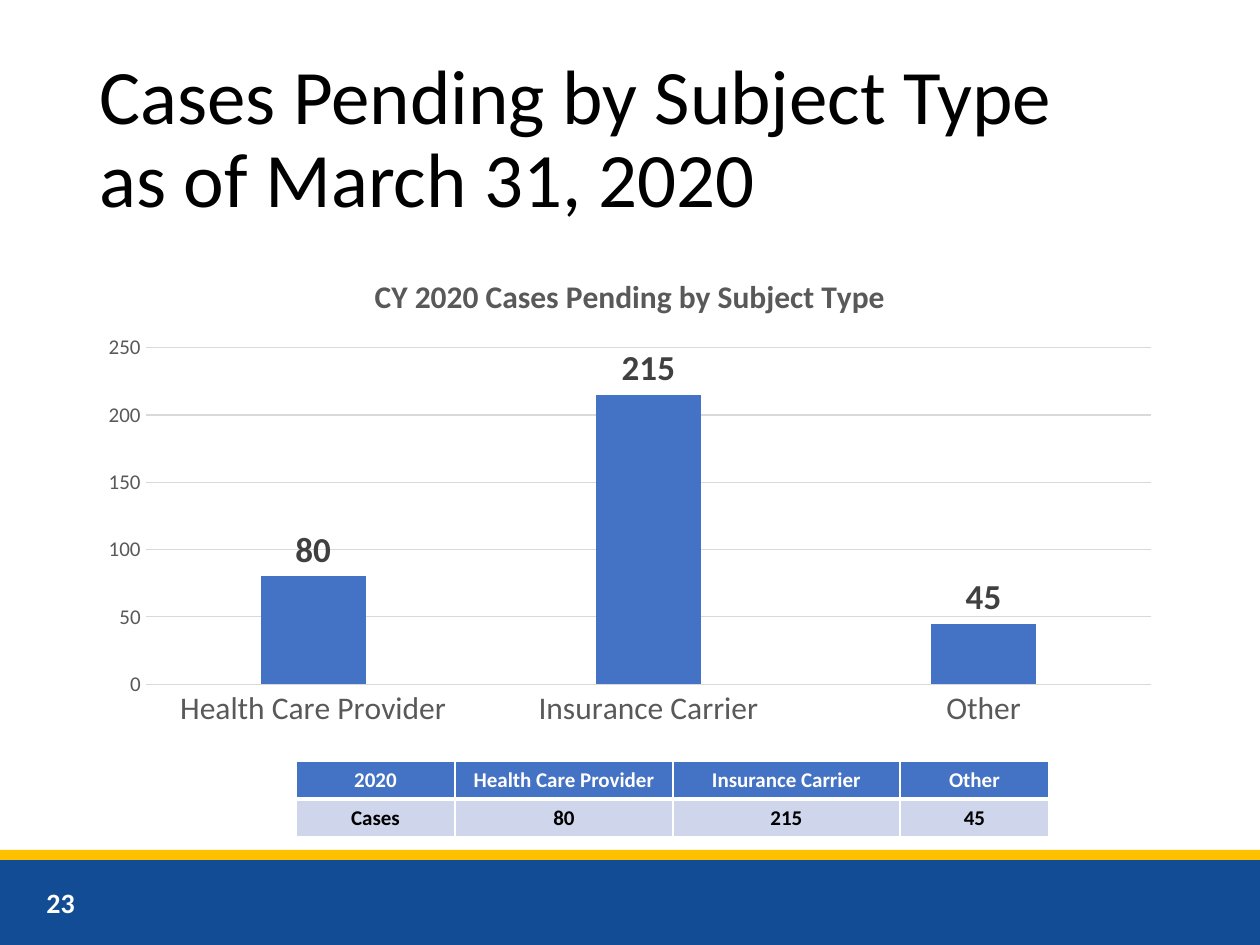
from lxml.etree import SubElement
from pptx import Presentation
from pptx.chart.data import CategoryChartData
from pptx.dml.color import RGBColor
from pptx.enum.chart import XL_CHART_TYPE as ChartType, XL_LABEL_POSITION as LabelPosition
from pptx.enum.chart import XL_TICK_MARK as TickMark
from pptx.enum.shapes import MSO_SHAPE as Shape
from pptx.enum.text import MSO_ANCHOR as Anchor, MSO_AUTO_SIZE as AutoSize, PP_ALIGN as Align
from pptx.oxml.ns import qn
from pptx.util import Pt

TITLE = "Cases Pending by Subject Type\vas of March 31, 2020"
CHART_TITLE = "CY 2020 Cases Pending by Subject Type"
PAGE_NUMBER = "23"
CASES = {"Health Care Provider": 80, "Insurance Carrier": 215, "Other": 45}
TABLE_ROWS = [["2020", *CASES], ["Cases", *map(str, CASES.values())]]

COLORS = {"navy": "124C95", "gold": "FFC000", "blue": "4472C4", "pale": "CFD5EA",
          "white": "FFFFFF", "black": "000000", "grey": "595959",
          "dark": "404040", "line": "D9D9D9"}
FONT = "Calibri"

# left, top, width, height in px
SCALE = 914400 // 126
SLIDE_SIZE = (1260, 945)
BANDS = [("navy", (0, 860, 1260, 85)), ("gold", (0, 850, 1260, 10))]
TITLE_BOX = (87, 50, 1086, 183)
CHART_BOX = (87, 252, 1086, 485)
NUMBER_BOX = (34, 877, 284, 50)
TABLE_ORIGIN = (296, 761)
COLUMN_WIDTHS = (159, 218, 227, 149)
ROW_HEIGHT = 38
ROW_STYLES = [
    {"fill": "blue", "text": "white", "borders": {"L": 1, "R": 1, "T": 1, "B": 3}},
    {"fill": "pale", "text": "black", "borders": {"L": 1, "R": 1, "T": 1, "B": 1}},
]


def px(*values):
    return [value * SCALE for value in values]


def rgb(name):
    return RGBColor.from_string(COLORS[name])


def paint(target, color):
    target.fill.solid()
    target.fill.fore_color.rgb = rgb(color)


def format_font(font, size, color, bold=False):
    for name, value in {"name": FONT, "size": Pt(size), "bold": bold}.items():
        setattr(font, name, value)
    font.color.rgb = rgb(color)


def set_borders(cell, widths):
    """Add white cell borders; these must come before the cell fill in the XML."""
    properties = cell._tc.get_or_add_tcPr()
    for side, width in widths.items():
        line = SubElement(properties, qn(f"a:ln{side}"), w=str(Pt(width)))
        SubElement(SubElement(line, qn("a:solidFill")), qn("a:srgbClr"), val=COLORS["white"])


def add_footer(slide):
    for color, box in BANDS:
        band = slide.shapes.add_shape(Shape.RECTANGLE, *px(*box))
        band.shadow.inherit = False
        paint(band, color)
        band.line.fill.background()
    frame = slide.shapes.add_textbox(*px(*NUMBER_BOX)).text_frame
    frame.word_wrap = True
    frame.vertical_anchor = Anchor.MIDDLE
    frame.text = PAGE_NUMBER
    format_font(frame.paragraphs[0].font, 16, "white", True)


def add_title(slide):
    title = slide.shapes.title
    title.left, title.top, title.width, title.height = px(*TITLE_BOX)
    frame = title.text_frame
    frame.text = TITLE
    frame.auto_size = AutoSize.NONE
    frame.vertical_anchor = Anchor.MIDDLE
    paragraph = frame.paragraphs[0]
    paragraph.alignment = Align.LEFT
    paragraph.line_spacing = 0.9
    format_font(paragraph.font, 44, "black")


def add_chart(slide):
    data = CategoryChartData()
    data.categories = list(CASES)
    data.add_series("Cases", list(CASES.values()))
    chart = slide.shapes.add_chart(ChartType.COLUMN_CLUSTERED, *px(*CHART_BOX), data).chart
    format_font(chart.font, 10, "black")
    chart.has_legend = False
    chart.has_title = True
    chart.chart_title.text_frame.text = CHART_TITLE
    format_font(chart.chart_title.text_frame.paragraphs[0].runs[0].font, 18, "grey", True)

    plot = chart.plots[0]
    plot.gap_width, plot.overlap, plot.vary_by_categories = 219, -27, False
    paint(plot.series[0].format, "blue")
    plot.has_data_labels = True
    labels = plot.data_labels
    labels.show_value = True
    labels.position = LabelPosition.OUTSIDE_END
    format_font(labels.font, 20, "dark", True)

    for axis, size in ((chart.category_axis, 18), (chart.value_axis, 12)):
        axis.major_tick_mark = axis.minor_tick_mark = TickMark.NONE
        format_font(axis.tick_labels.font, size, "grey")
    value_axis = chart.value_axis
    value_axis.minimum_scale, value_axis.maximum_scale, value_axis.major_unit = 0, 250, 50
    value_axis.format.line.fill.background()
    for part in (chart.category_axis, value_axis.major_gridlines):
        part.format.line.color.rgb = rgb("line")
        part.format.line.width = Pt(0.75)


def add_table(slide):
    size = (sum(COLUMN_WIDTHS), ROW_HEIGHT * len(TABLE_ROWS))
    table = slide.shapes.add_table(len(TABLE_ROWS), len(COLUMN_WIDTHS),
                                   *px(*TABLE_ORIGIN, *size)).table
    for column, width in zip(table.columns, px(*COLUMN_WIDTHS)):
        column.width = width
    for row, texts, style in zip(table.rows, TABLE_ROWS, ROW_STYLES):
        for cell, text in zip(row.cells, texts):
            set_borders(cell, style["borders"])
            paint(cell, style["fill"])
            cell.vertical_anchor = Anchor.MIDDLE
            cell.margin_left = cell.margin_right = Pt(3.6)
            cell.text = text
            paragraph = cell.text_frame.paragraphs[0]
            paragraph.alignment = Align.CENTER
            format_font(paragraph.font, 12, style["text"], True)


def main():
    presentation = Presentation()
    presentation.slide_width, presentation.slide_height = px(*SLIDE_SIZE)
    slide = presentation.slides.add_slide(presentation.slide_layouts[5])
    add_footer(slide)
    add_table(slide)
    add_chart(slide)
    add_title(slide)
    presentation.save("out.pptx")


if __name__ == "__main__":
    main()
